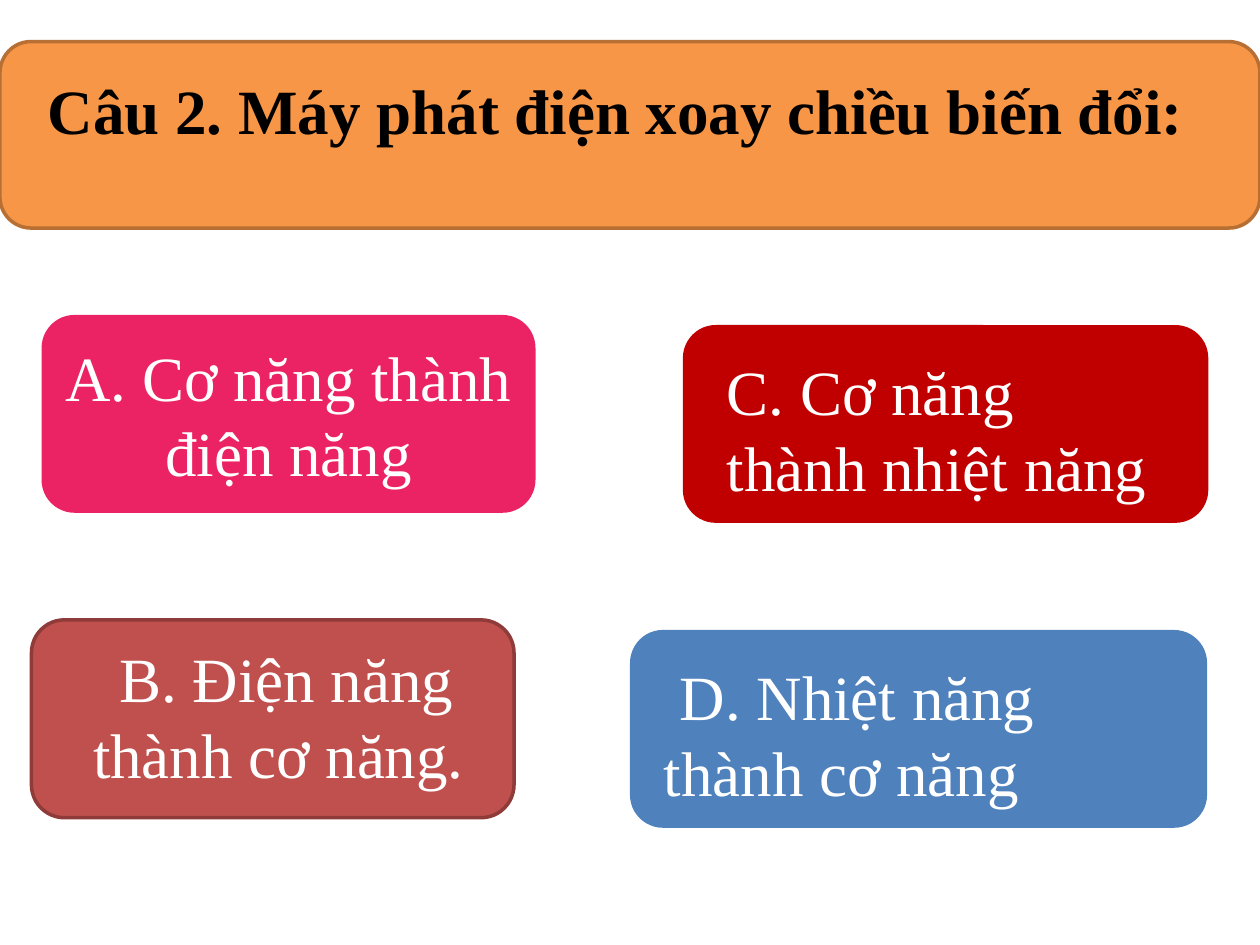
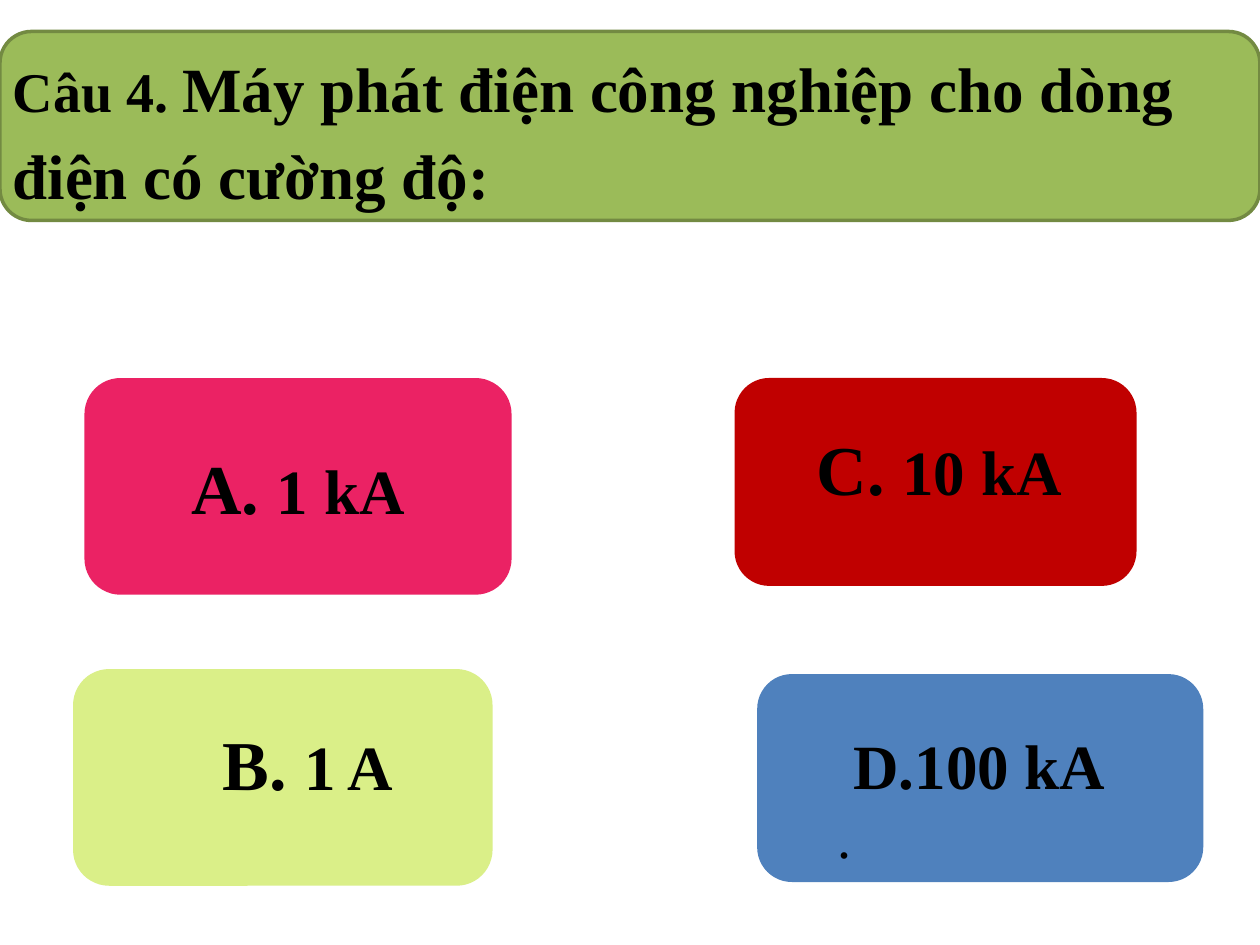
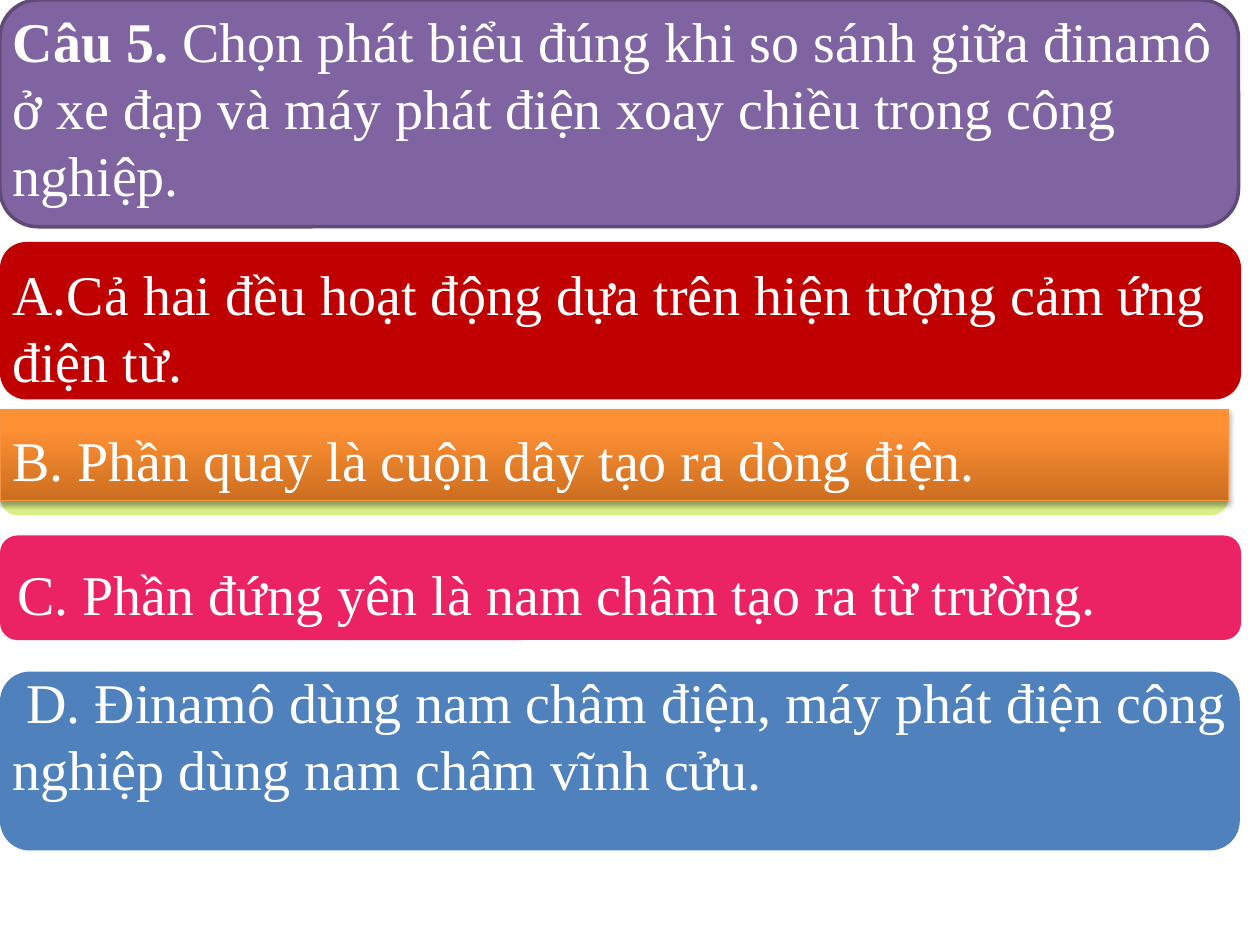
from dataclasses import dataclass
from typing import NamedTuple

from lxml.etree import SubElement
from pptx import Presentation
from pptx.dml.color import RGBColor
from pptx.enum.shapes import MSO_SHAPE
from pptx.enum.text import MSO_ANCHOR, MSO_AUTO_SIZE, PP_ALIGN
from pptx.oxml.ns import qn
from pptx.util import Inches, Pt

FONT = "Times New Roman"
BLACK, WHITE = "000000", "FFFFFF"
PINK, RED, BLUE, LIME = "EB2264", "C00000", "4F81BD", "DAEF88"
BRICK, ORANGE, GREEN, PURPLE = "C0504D", "F79646", "9BBB59", "8064A2"
BORDERS = {ORANGE: "B76F34", BRICK: "8E3B39", GREEN: "738A42", PURPLE: "5F4A78"}
TITLE_ONLY = 5


class Area(NamedTuple):
    left: float
    top: float
    width: float
    height: float


class Span(NamedTuple):
    text: str
    size: int
    bold: bool = False


@dataclass
class Text:
    paras: list[list[Span]]
    color: str = WHITE
    align: PP_ALIGN = PP_ALIGN.LEFT
    anchor: MSO_ANCHOR = MSO_ANCHOR.TOP
    line_spacing: float = 1.0
    space_after: int = 0


@dataclass
class Card:
    """A coloured panel; its text sits in text_area, or in the panel itself."""
    area: Area
    fill: str
    text: Text | None = None
    text_area: Area | None = None


@dataclass
class Question:
    band: Card
    answers: list[Card]


def rgb(value: str) -> RGBColor:
    return RGBColor.from_string(value)


def apply_format(target, values: dict) -> None:
    for name, value in values.items():
        setattr(target, name, value)


def lengths(area: Area) -> list:
    return [Inches(value) for value in area]


def write(frame, text: Text) -> None:
    apply_format(frame, {"word_wrap": True, "auto_size": MSO_AUTO_SIZE.NONE,
                         "vertical_anchor": text.anchor})
    for index, spans in enumerate(text.paras):
        para = frame.add_paragraph() if index else frame.paragraphs[0]
        apply_format(para, {"alignment": text.align, "line_spacing": text.line_spacing,
                            "space_after": Pt(text.space_after)})
        for part in spans:
            span = para.add_run()
            span.text = part.text
            apply_format(span.font, {"name": FONT, "size": Pt(part.size), "bold": part.bold})
            span.font.color.rgb = rgb(text.color)


def add_panel(page, area: Area, fill: str, kind=MSO_SHAPE.ROUNDED_RECTANGLE):
    panel = page.shapes.add_shape(kind, *lengths(area))
    panel.shadow.inherit = False
    panel.fill.solid()
    panel.fill.fore_color.rgb = rgb(fill)
    if fill in BORDERS:
        panel.line.color.rgb = rgb(BORDERS[fill])
        panel.line.width = Pt(2)
    else:
        panel.line.fill.background()
    return panel


def add_card(page, card: Card) -> None:
    panel = add_panel(page, card.area, card.fill)
    if card.text:
        box = page.shapes.add_textbox(*lengths(card.text_area)) if card.text_area else panel
        write(box.text_frame, card.text)


def add_question(deck, question: Question):
    page = deck.slides.add_slide(deck.slide_layouts[TITLE_ONLY])
    band = question.band
    add_panel(page, band.area, band.fill)
    title = page.shapes.title
    names = ("left", "top", "width", "height")
    apply_format(title, dict(zip(names, lengths(band.text_area))))
    write(title.text_frame, band.text)
    # The title must lie in front of its band
    tree = title.element.getparent()
    tree.append(title.element)
    for answer in question.answers:
        add_card(page, answer)
    return page


def add_glossy_bar(page, area: Area, text: Text) -> None:
    bar = add_panel(page, area, ORANGE, MSO_SHAPE.RECTANGLE)
    bar.line.color.rgb = rgb("F69240")
    bar.line.width = Pt(0.75)
    bar.fill.gradient()
    bar.fill.gradient_angle = 90
    stops = (("CC6E20", 0), ("FF9034", 0.8))
    for stop, (color, position) in zip(bar.fill.gradient_stops, stops):
        stop.color.rgb = rgb(color)
        stop.position = position
    effects = bar.element.spPr.find(qn("a:effectLst"))
    shadow = SubElement(effects, qn("a:outerShdw"), blurRad=str(Pt(3.1)),
                        dist=str(Pt(1.8)), dir="5400000", rotWithShape="0")
    tint = SubElement(shadow, qn("a:srgbClr"), val=BLACK)
    SubElement(tint, qn("a:alpha"), val="35000")
    write(bar.text_frame, text)


def choice(text: str, align=PP_ALIGN.LEFT, anchor=MSO_ANCHOR.TOP) -> Text:
    return Text([[Span(text, 36)]], align=align, anchor=anchor)


def current(letter: str, value: str, anchor=MSO_ANCHOR.TOP) -> Text:
    return Text([[Span(letter, 40, True), Span(value, 36, True)]],
                BLACK, PP_ALIGN.CENTER, anchor)


def statement(text: str, **layout) -> Text:
    return Text([[Span(text, 32)]], **layout)


ENERGY = Question(
    Card(Area(0, 0.33, 10, 1.48), ORANGE,
         Text([[Span("Câu 2. Máy phát điện xoay chiều biến đổi:", 36, True)]],
              BLACK, PP_ALIGN.CENTER, line_spacing=1.15, space_after=8),
         Area(0.21, 0.43, 9.35, 1.53)),
    [
        Card(Area(0.33, 2.5, 3.92, 1.57), PINK,
             choice("A. Cơ năng thành điện năng", PP_ALIGN.CENTER, MSO_ANCHOR.MIDDLE)),
        Card(Area(0.25, 4.92, 3.83, 1.57), BRICK,
             choice(" B. Điện năng thành cơ năng.", PP_ALIGN.CENTER),
             Area(0.25, 5.03, 3.92, 1.78)),
        Card(Area(5.42, 2.58, 4.17, 1.57), RED,
             choice("C. Cơ năng thành nhiệt năng"), Area(5.67, 2.75, 3.65, 1.31)),
        Card(Area(5, 5, 4.58, 1.57), BLUE,
             choice(" D. Nhiệt năng thành cơ năng"), Area(5.17, 5.17, 4.33, 1.31)),
    ])

CURRENT = Question(
    Card(Area(0, 0.25, 10, 1.5), GREEN,
         Text([[Span("Câu 4. ", 32, True),
                Span("Máy phát điện công nghiệp cho dòng điện có cường độ:", 36, True)]],
              BLACK, line_spacing=1.15, space_after=8),
         Area(0, 0.25, 10, 1.44)),
    [
        Card(Area(0.67, 3, 3.39, 1.72), PINK, current("A. ", "1 kA", MSO_ANCHOR.MIDDLE)),
        Card(Area(0.58, 5.31, 3.33, 1.72), LIME,
             current(" B. ", "1 A"), Area(0.58, 5.67, 3.59, 0.77)),
        Card(Area(5.83, 3, 3.19, 1.65), RED,
             current("C. ", "10 kA"), Area(6.08, 3.33, 2.75, 0.77)),
        Card(Area(6.01, 5.35, 3.54, 1.65), BLUE,
             Text([[Span(" D.100 kA", 36, True)], [Span(".", 32)]], BLACK),
             Area(6.55, 5.72, 3.45, 1.78)),
    ])

COMPARISON = Question(
    Card(Area(0, 0, 9.83, 1.8), PURPLE,
         Text([[Span("Câu 5. ", 32, True),
                Span("Chọn phát biểu đúng khi so sánh giữa đinamô ở xe đạp và "
                     "máy phát điện xoay chiều trong công nghiệp.", 32)]], space_after=8),
         Area(0, 0, 10, 2)),
    [
        Card(Area(0, 1.92, 9.85, 1.25), RED,
             statement("A.Cả hai đều hoạt động dựa trên hiện tượng cảm ứng điện từ.",
                       space_after=8),
             Area(0, 2.01, 10, 1.02)),
        Card(Area(0, 3.25, 9.75, 0.84), LIME),
        Card(Area(0, 4.25, 9.85, 0.83), PINK,
             statement("C. Phần đứng yên là nam châm tạo ra từ trường.",
                       anchor=MSO_ANCHOR.MIDDLE, line_spacing=1.15, space_after=8)),
        Card(Area(0, 5.33, 9.84, 1.42), BLUE,
             statement(" D. Đinamô dùng nam châm điện, máy phát điện công nghiệp "
                       "dùng nam châm vĩnh cửu."),
             Area(0, 5.25, 9.9, 1.18)),
    ])


def main() -> None:
    deck = Presentation()
    deck.slide_width, deck.slide_height = Inches(10), Inches(7.5)
    add_question(deck, ENERGY)
    add_question(deck, CURRENT)
    comparison_page = add_question(deck, COMPARISON)
    add_glossy_bar(comparison_page, Area(0, 3.25, 9.75, 0.72),
                   statement("B. Phần quay là cuộn dây tạo ra dòng điện.",
                             line_spacing=1.15, space_after=8))
    deck.save("out.pptx")


if __name__ == "__main__":
    main()
